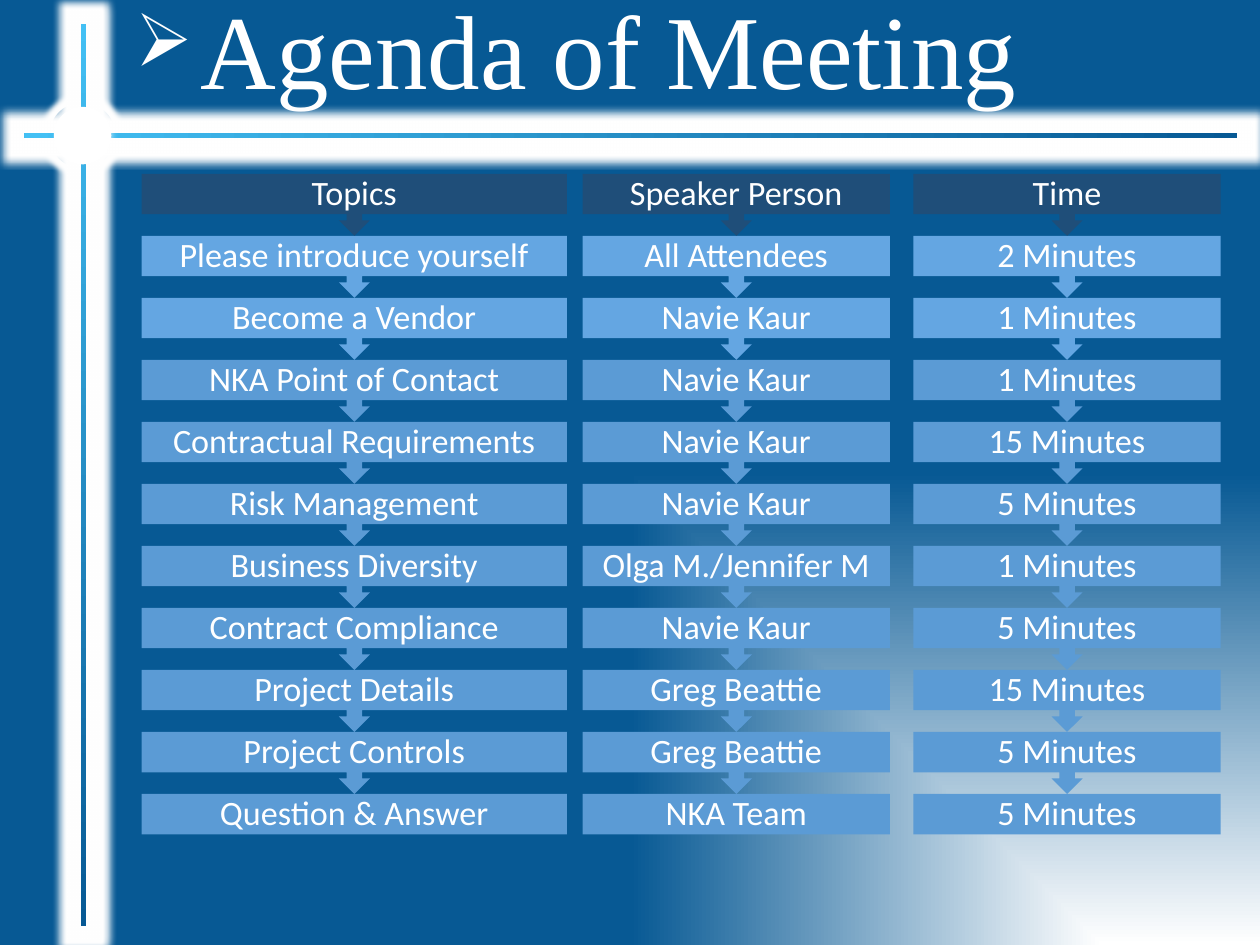
from lxml import etree
from pptx import Presentation
from pptx.dml.color import RGBColor
from pptx.enum import shapes, text
from pptx.oxml import ns
from pptx.util import Pt

WHITE = RGBColor(0xFF, 0xFF, 0xFF)
DEEP_BLUE = RGBColor(0x07, 0x59, 0x94)
SKY_BLUE = RGBColor(0x43, 0xC0, 0xF4)
HEADER_BLUE = RGBColor(0x1F, 0x4E, 0x79)
LIGHT_BLUE = RGBColor(0x64, 0xA6, 0xE2)
STEP_BLUE = RGBColor(0x5B, 0x9B, 0xD5)

SHAPE = shapes.MSO_SHAPE
ROW_TOP, ROW_PITCH, ROW_HEIGHT = 132.4, 47.25, 30.8

# Left edge and width of each agenda column
COLUMNS = [(108, 324), (444, 234), (696, 234)]
AGENDA = [
    ("Topics", "Speaker Person", "Time"),
    ("Please introduce yourself", "All Attendees", "2 Minutes"),
    ("Become a Vendor", "Navie Kaur", "1 Minutes"),
    ("NKA Point of Contact", "Navie Kaur", "1 Minutes"),
    ("Contractual Requirements", "Navie Kaur", "15 Minutes"),
    ("Risk Management", "Navie Kaur", "5 Minutes"),
    ("Business Diversity", "Olga M./Jennifer M", "1 Minutes"),
    ("Contract Compliance", "Navie Kaur", "5 Minutes"),
    ("Project Details", "Greg Beattie", "15 Minutes"),
    ("Project Controls", "Greg Beattie", "5 Minutes"),
    ("Question & Answer", "NKA Team", "5 Minutes"),
]


def add_child(parent, tag, **attributes):
    return etree.SubElement(parent, ns.qn(tag), **attributes)


def set_gradient(fill, start, end):
    fill.gradient()
    for stop, color in zip(fill.gradient_stops, (start, end)):
        stop.color.rgb = color


def set_background(page):
    fill = page.background.fill
    set_gradient(fill, WHITE, DEEP_BLUE)
    # A rectangular gradient that starts in the lower right corner
    gradient = page._element.find(".//" + ns.qn("a:gradFill"))
    gradient.remove(gradient.find(ns.qn("a:lin")))
    corner = add_child(gradient, "a:path", path="rect")
    add_child(corner, "a:fillToRect", l="100000", t="100000")


def add_figure(page, kind, left, top, width, height, color=None):
    figure = page.shapes.add_shape(kind, Pt(left), Pt(top), Pt(width), Pt(height))
    figure.shadow.inherit = False
    figure.line.fill.background()
    if color is not None:
        figure.fill.solid()
        figure.fill.fore_color.rgb = color
    return figure


def add_glow(figure, radius):
    effects = figure._element.spPr.find(ns.qn("a:effectLst"))
    glow = add_child(effects, "a:glow", rad=str(Pt(radius)))
    add_child(glow, "a:srgbClr", val=str(WHITE))


def add_frame(page, left, top, width, height, rotation=0):
    frame = add_figure(page, SHAPE.FRAME, left, top, width, height)
    frame.adjustments[0] = 0.25
    frame.rotation = rotation
    set_gradient(frame.fill, SKY_BLUE, DEEP_BLUE)
    frame.fill.gradient_angle = 180


def add_bar(page, left, top, width, height, angle):
    bar = add_figure(page, SHAPE.RECTANGLE, left, top, width, height)
    set_gradient(bar.fill, DEEP_BLUE, SKY_BLUE)
    bar.fill.gradient_angle = angle
    add_glow(bar, 12)


def add_label(page, left, top, width, height, words, font, size):
    box = page.shapes.add_textbox(Pt(left), Pt(top), Pt(width), Pt(height))
    frame = box.text_frame
    frame.word_wrap = True
    frame.vertical_anchor = text.MSO_ANCHOR.MIDDLE
    frame.text = words
    para = frame.paragraphs[0]
    para.line_spacing = 0.9
    span = para.runs[0]
    span.font.name = font
    span.font.size = Pt(size)
    span.font.color.rgb = WHITE
    return box


def add_title(page):
    box = add_label(page, 96, 6, 864, 72, "Agenda of Meeting", "Times New Roman", 80)
    properties = box.text_frame.paragraphs[0]._p.get_or_add_pPr()
    properties.set("marL", str(Pt(49.5)))
    properties.set("indent", str(Pt(-49.5)))
    add_child(properties, "a:buSzPct", val="70000")
    add_child(properties, "a:buChar", char="➢")


def add_cross(page):
    add_frame(page, 12, 96, 936, 14.4)
    add_frame(page, -285.8, 354.2, 698.4, 14.4, rotation=90)
    ring = add_figure(page, SHAPE.DONUT, 37.6, 78, 50.4, 50.4, DEEP_BLUE)
    ring.adjustments[0] = 0.07
    add_glow(ring, 8)
    add_bar(page, 18.6, 101.4, 924, 3.6, angle=180)
    add_bar(page, 61.8, 18, 3.6, 687.6, angle=90)
    add_figure(page, SHAPE.OVAL, 41, 81.4, 43.8, 43.8, WHITE)


def row_color(row):
    if row == 0:
        return HEADER_BLUE
    return LIGHT_BLUE if row <= 2 else STEP_BLUE


def add_step(page, left, width, row, words):
    top = ROW_TOP + row * ROW_PITCH
    if row == len(AGENDA) - 1:
        add_figure(page, SHAPE.RECTANGLE, left, top, width, ROW_HEIGHT, row_color(row))
    else:
        step = add_figure(page, SHAPE.UP_ARROW_CALLOUT, left, top, width,
                          ROW_PITCH, row_color(row))
        step.rotation = 180
    box = add_label(page, left, top, width, ROW_HEIGHT, words, "Calibri", 26)
    frame = box.text_frame
    frame.margin_left = frame.margin_right = Pt(14.4)
    frame.margin_top = frame.margin_bottom = Pt(14.4)
    frame.paragraphs[0].alignment = text.PP_ALIGN.CENTER


def add_agenda_column(page, column):
    left, width = COLUMNS[column]
    # From the bottom up, so each arrow lies over the step below it
    for row in reversed(range(len(AGENDA))):
        add_step(page, left, width, row, AGENDA[row][column])


def main():
    deck = Presentation()
    deck.slide_width, deck.slide_height = Pt(960), Pt(720)
    page = deck.slides.add_slide(deck.slide_layouts[6])
    set_background(page)

    # Title and decorative cross
    add_title(page)
    add_cross(page)

    # Agenda
    for column in range(len(COLUMNS)):
        add_agenda_column(page, column)
    deck.save("out.pptx")


if __name__ == "__main__":
    main()
